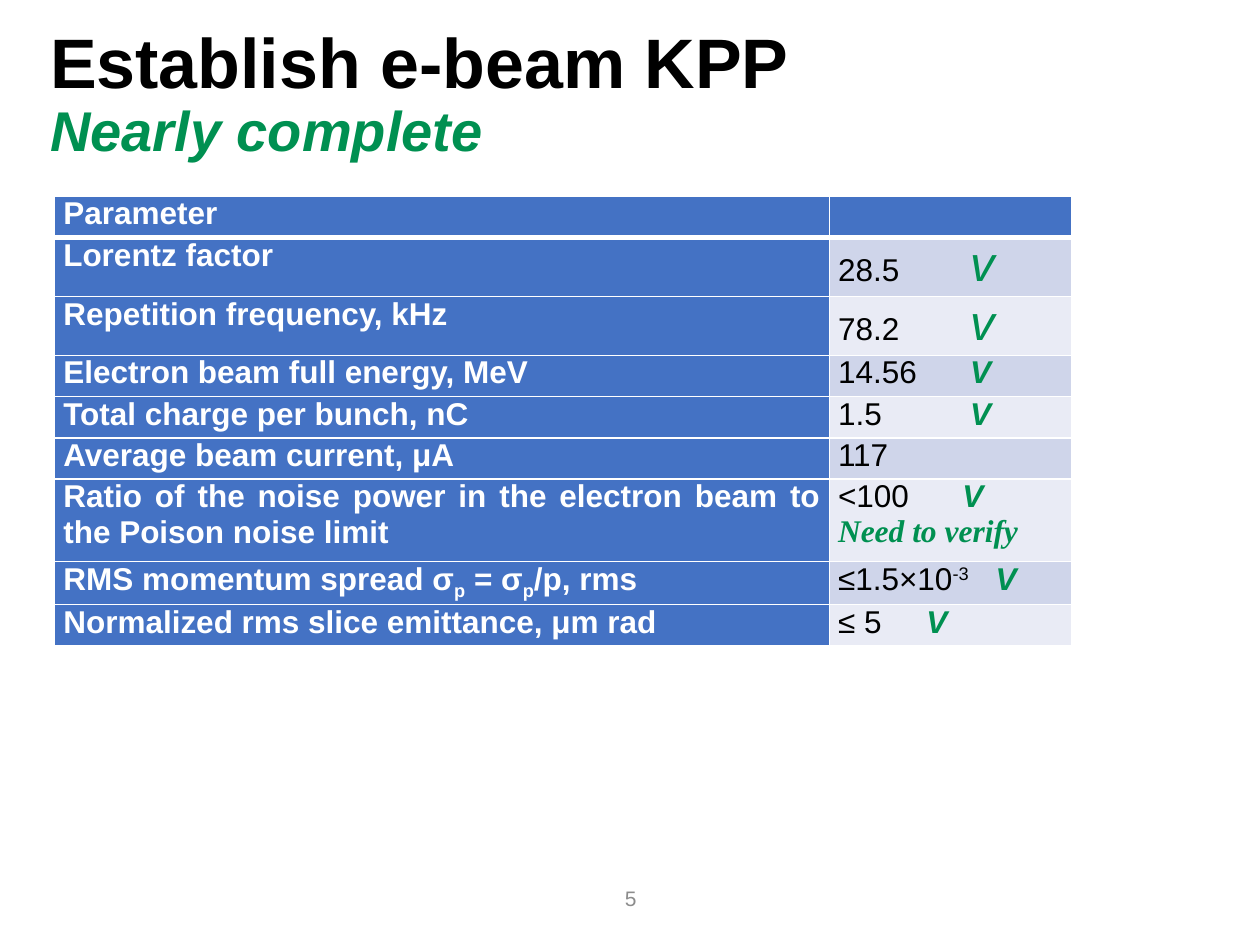
from pptx import Presentation
from pptx.dml.color import RGBColor
from pptx.enum.text import MSO_ANCHOR as Anchor, PP_ALIGN as Align
from pptx.oxml.ns import qn
from pptx.util import Pt
from lxml.etree import SubElement as Sub

BLACK = RGBColor(0, 0, 0)
WHITE = RGBColor(255, 255, 255)
GREEN = RGBColor(0x00, 0x90, 0x51)
GRAY = RGBColor(0x8C, 0x8C, 0x8C)
BLUE = RGBColor(0x44, 0x72, 0xC4)
BANDS = (RGBColor(0xCF, 0xD5, 0xEA), RGBColor(0xE9, 0xEB, 0xF5))

LINE, TALL, DOUBLE = 23.6, 31.2, 47
TICK = dict(color=GREEN, bold=True, italic=True)
THIN = dict(color=GREEN, size=28, italic=True)
NOTE = dict(TICK, name="Times New Roman")
HEAD = dict(color=WHITE, bold=True)
SUB = dict(HEAD, base=-25)
SUP = dict(base=30)

# Each row: height, label runs, value paragraphs, tab stop of the tick
ROWS = [
    (LINE, [("Parameter", HEAD)], [], 0),
    (TALL, [("Lorentz factor", HEAD)], [[("28.5\t", {}), ("v", THIN)]], 75.5),
    (TALL, [("Repetition frequency, kHz", HEAD)],
     [[("78.2\t", {}), ("v", THIN)]], 75.5),
    (LINE, [("Electron beam full energy, MeV", HEAD)],
     [[("14.56\t", {}), ("V", TICK)]], 75.5),
    (LINE, [("Total charge per bunch, nC", HEAD)],
     [[("1.5\t", {}), ("V", TICK)]], 75.5),
    (LINE, [("Average beam current, μA", HEAD)], [[("117", {})]], 0),
    (DOUBLE, [("Ratio of the noise power in the electron beam to "
               "the Poison noise limit", HEAD)],
     [[("<100\t", {}), ("V", TICK)], [("Need to verify", NOTE)]], 71),
    (LINE, [("RMS momentum spread σ", HEAD), ("p", SUB), (" = σ", HEAD),
            ("p", SUB), ("/p, rms", HEAD)],
     [[("≤1.5×10", {}), ("-3", SUP), ("\t", {}), ("V", TICK)]], 90),
    (LINE, [("Normalized rms slice emittance, μm rad", HEAD)],
     [[("≤ 5\t", {}), ("V", TICK)]], 50.5),
]


def style(run, size=18, color=BLACK, bold=False, italic=False,
          name="Arial", base=0):
    font = run.font
    font.size, font.name = Pt(size), name
    font.bold, font.italic = bold, italic
    font.color.rgb = color
    if base:
        run._r.get_or_add_rPr().set("baseline", str(base * 1000))


def add_box(slide, left, top, width, height, text, looks):
    """Add a text box whose runs take the given looks; return its frame."""
    box = slide.shapes.add_textbox(Pt(left), Pt(top), Pt(width), Pt(height))
    frame = box.text_frame
    frame.word_wrap = True
    frame.text = text
    para = frame.paragraphs[0]
    para.text = text
    for run, look in zip(para.runs, looks):
        style(run, **look)
    return frame


def set_tab(para, stop):
    tabs = Sub(para._p.get_or_add_pPr(), qn("a:tabLst"))
    Sub(tabs, qn("a:tab"), pos=str(Pt(stop)), algn="l")


def set_edges(cell, top, bottom):
    """Draw white borders; top and bottom are widths in points."""
    props = cell._tc.get_or_add_tcPr()
    for tag, width in zip(("lnL", "lnR", "lnT", "lnB"), (1, 1, top, bottom)):
        line = Sub(props, qn(f"a:{tag}"), w=str(Pt(width)))
        fill = Sub(line, qn("a:solidFill"))
        Sub(fill, qn("a:srgbClr"), val=str(WHITE))


def fill_cell(cell, paras, color, row, stop=0):
    cell.margin_left = cell.margin_right = Pt(5)
    cell.margin_top = cell.margin_bottom = 0
    set_edges(cell, 3 if row == 1 else 1, 3 if row == 0 else 1)
    cell.fill.solid()
    cell.fill.fore_color.rgb = color
    frame = cell.text_frame
    for num, runs in enumerate(paras):
        para = frame.add_paragraph() if num else frame.paragraphs[0]
        para.alignment = Align.JUSTIFY
        if stop:
            set_tab(para, stop)
        for text, look in runs:
            run = para.add_run()
            run.text = text
            style(run, **look)


def add_grid(slide):
    high = sum(row[0] for row in ROWS)
    table = slide.shapes.add_table(len(ROWS), 2, Pt(31.2), Pt(112.2),
                                   Pt(581), Pt(high)).table
    for col, width in zip(table.columns, (442.7, 138.3)):
        col.width = Pt(width)
    for num, (height, label, value, stop) in enumerate(ROWS):
        table.rows[num].height = Pt(height)
        band = BANDS[(num - 1) % 2] if num else BLUE
        fill_cell(table.cell(num, 0), [label], BLUE, num)
        fill_cell(table.cell(num, 1), value, band, num, stop)


def main():
    deck = Presentation()
    deck.slide_width, deck.slide_height = Pt(720), Pt(540)
    slide = deck.slides.add_slide(deck.slide_layouts[6])
    title = add_box(slide, 21.6, 12.2, 656, 82,
                    "Establish e-beam KPP\vNearly complete",
                    [dict(size=40, bold=True), dict(TICK, size=32)])
    title.paragraphs[0].line_spacing = 0.9
    add_grid(slide)
    page = add_box(slide, 279.4, 499, 162, 28.8, "5",
                   [dict(size=12, color=GRAY)])
    page.vertical_anchor = Anchor.MIDDLE
    page.paragraphs[0].alignment = Align.CENTER
    deck.save("out.pptx")


if __name__ == "__main__":
    main()
